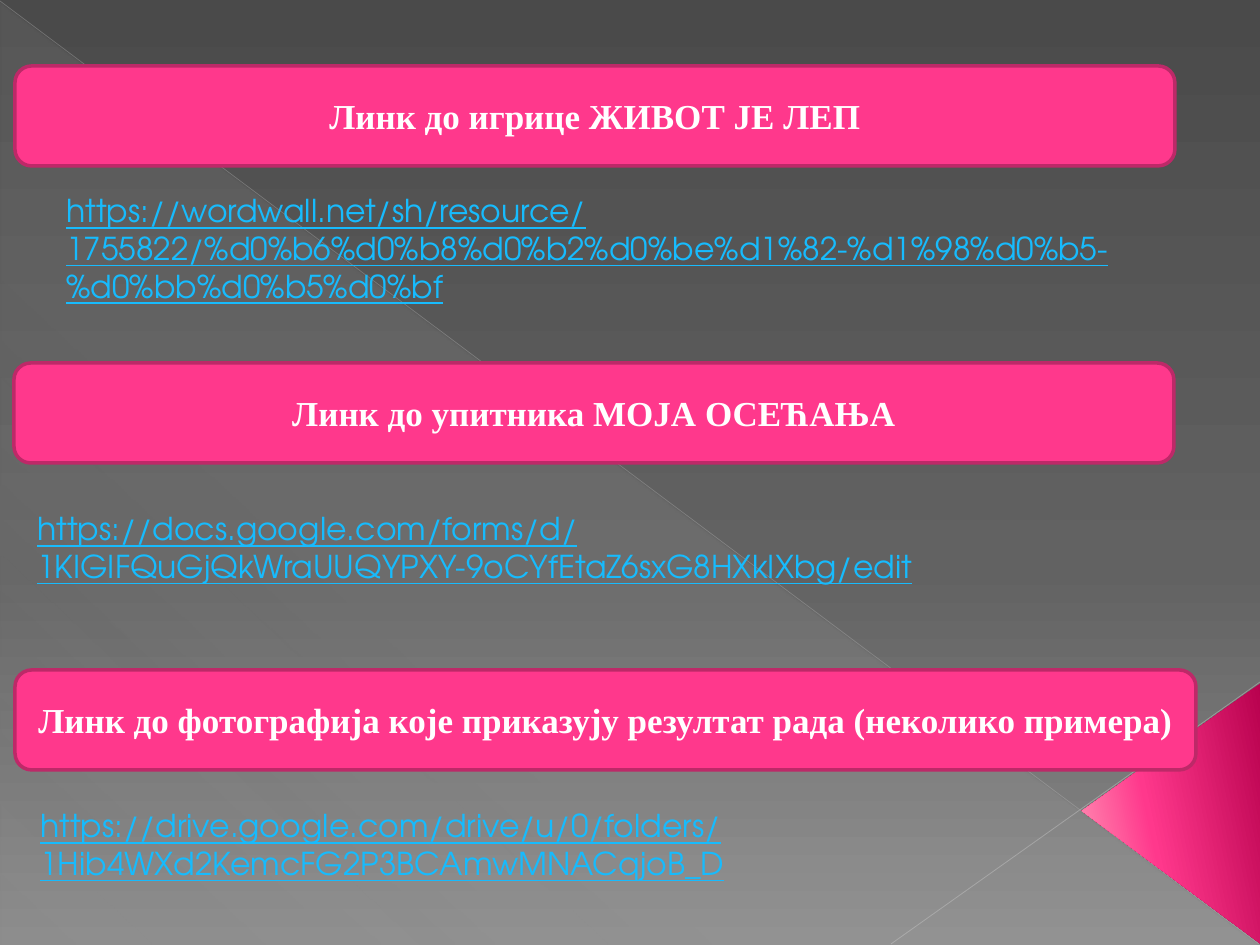
"""Build a slide with three headed links."""
from dataclasses import dataclass

from lxml import etree
from pptx import Presentation
from pptx import util as u
from pptx.dml.color import RGBColor
from pptx.enum import shapes, text
from pptx.oxml import ns

SCALE = 914400 / 126
KIND = shapes.MSO_SHAPE


@dataclass(frozen=True)
class Theme:
    pink: str = "FF388C"
    edge: str = "BD2968"
    white: str = "FFFFFF"
    link: str = "17BBFD"
    back: tuple = ((0, "4A4A4A", 100), (60, "626262", 100), (100, "8C8C8C", 100))
    haze: tuple = ((0, "D2D2D2", 10), (70, "D2D2D2", 8), (100, "D2D2D2", 1))
    glow: tuple = ((0, "B8014E", 100), (60, "FF388C", 100), (100, "FF9CB9", 100))
    serif: str = "Times New Roman"
    sans: str = "TeX Gyre Adventor"
    head: int = 20
    body: int = 18


def px(*vals):
    return [u.Emu(round(v * SCALE)) for v in vals]


def sub(root, tag, **vals):
    return etree.SubElement(root, ns.qn(tag), {k: str(v) for k, v in vals.items()})


class Deck:
    def __init__(self, theme):
        self.theme = theme
        self.file = Presentation()
        self.file.slide_width, self.file.slide_height = px(1260, 945)
        self.slide = self.file.slides.add_slide(self.file.slide_layouts[6])

    def grade(self, root, fill, stops, angle):
        fill.gradient()
        grad = next(root.iter(ns.qn("a:gradFill")))
        for node in list(grad):
            grad.remove(node)
        group = sub(grad, "a:gsLst")
        for pos, tint, alpha in stops:
            stop = sub(group, "a:gs", pos=pos * 1000)
            sub(sub(stop, "a:srgbClr", val=tint), "a:alpha", val=alpha * 1000)
        sub(grad, "a:lin", ang=angle * 60000, scaled=0)

    def back(self, stops, angle):
        self.grade(self.slide._element, self.slide.background.fill, stops, angle)

    def shape(self, kind, area):
        item = self.slide.shapes.add_shape(kind, *px(*area))
        item.shadow.inherit = False
        return item

    def wedge(self, kind, area, stops, angle, turn=0):
        item = self.shape(kind, area)
        item.rotation = turn
        item.line.fill.background()
        self.grade(item._element, item.fill, stops, angle)
        return item

    def line(self, ends, tint, width, alpha):
        item = self.slide.shapes.add_connector(shapes.MSO_CONNECTOR.STRAIGHT, *px(*ends))
        item.line.width = u.Pt(width)
        item.line.color.rgb = RGBColor.from_string(tint)
        tone = next(item._element.iter(ns.qn("a:srgbClr")))
        sub(tone, "a:alpha", val=alpha * 1000)
        sub(item._element.spPr, "a:effectLst")

    def label(self, item, words, tint, frame, para, font):
        part = item.text_frame.paragraphs[0]
        run = part.add_run()
        run.text = words
        run.font.color.rgb = RGBColor.from_string(tint)
        for goal, vals in ((item.text_frame, frame), (part, para), (run.font, font)):
            for key, val in vals.items():
                setattr(goal, key, val)

    def head(self, words, area):
        look = self.theme
        item = self.shape(KIND.ROUNDED_RECTANGLE, area)
        item.fill.solid()
        item.fill.fore_color.rgb = RGBColor.from_string(look.pink)
        item.line.color.rgb = RGBColor.from_string(look.edge)
        item.line.width = u.Pt(2)
        self.label(item, words, look.white,
                   {"word_wrap": True, "vertical_anchor": text.MSO_ANCHOR.MIDDLE},
                   {"alignment": text.PP_ALIGN.CENTER},
                   {"name": look.serif, "size": u.Pt(look.head), "bold": True})

    def link(self, words, area):
        look = self.theme
        item = self.slide.shapes.add_textbox(*px(*area))
        self.label(item, words, look.link,
                   {"word_wrap": True, "auto_size": text.MSO_AUTO_SIZE.SHAPE_TO_FIT_TEXT},
                   {"alignment": text.PP_ALIGN.LEFT},
                   {"name": look.sans, "size": u.Pt(look.body), "underline": True})


def main():
    theme = Theme()
    deck = Deck(theme)
    deck.back(theme.back, 90)
    deck.wedge(KIND.RIGHT_TRIANGLE, (1, 3, 1257, 942), theme.haze, 133)
    deck.line((0, 1, 1259, 944), "BFBFBF", 0.39, 35)
    deck.line((1260, 682, 891, 944), "C6C6C6", 0.47, 45)
    peak = deck.wedge(KIND.ISOSCELES_TRIANGLE, (1041, 724, 261, 179), theme.glow, 258, 270)
    peak.adjustments[0] = 0.51

    heads = (
        ("Линк до игрице ЖИВОТ ЈЕ ЛЕП", 15, 66, 1160),
        ("Линк до упитника МОЈА ОСЕЋАЊА", 14, 363, 1160),
        ("Линк до фотографија које приказују резултат рада (неколико примера)", 15, 670, 1181),
    )
    links = (
        ("https://wordwall.net/sh/resource/1755822/%d0%b6%d0%b8%d0%b2%d0%be%d1%82-"
         "%d1%98%d0%b5-%d0%bb%d0%b5%d0%bf", 54, 185, 1121),
        ("https://docs.google.com/forms/d/"
         "1KIGIFQuGjQkWraUUQYPXY-9oCYfEtaZ6sxG8HXkIXbg/edit", 25, 503, 1131),
        ("https://drive.google.com/drive/u/0/folders/"
         "1Hib4WXd2KemcFG2P3BCAmwMNACqjoB_D", 28, 800, 1148),
    )
    for draw, rows, high in ((deck.head, heads, 100), (deck.link, links, 89)):
        for words, left, top, wide in rows:
            draw(words, (left, top, wide, high))
    deck.file.save("out.pptx")


if __name__ == "__main__":
    main()
